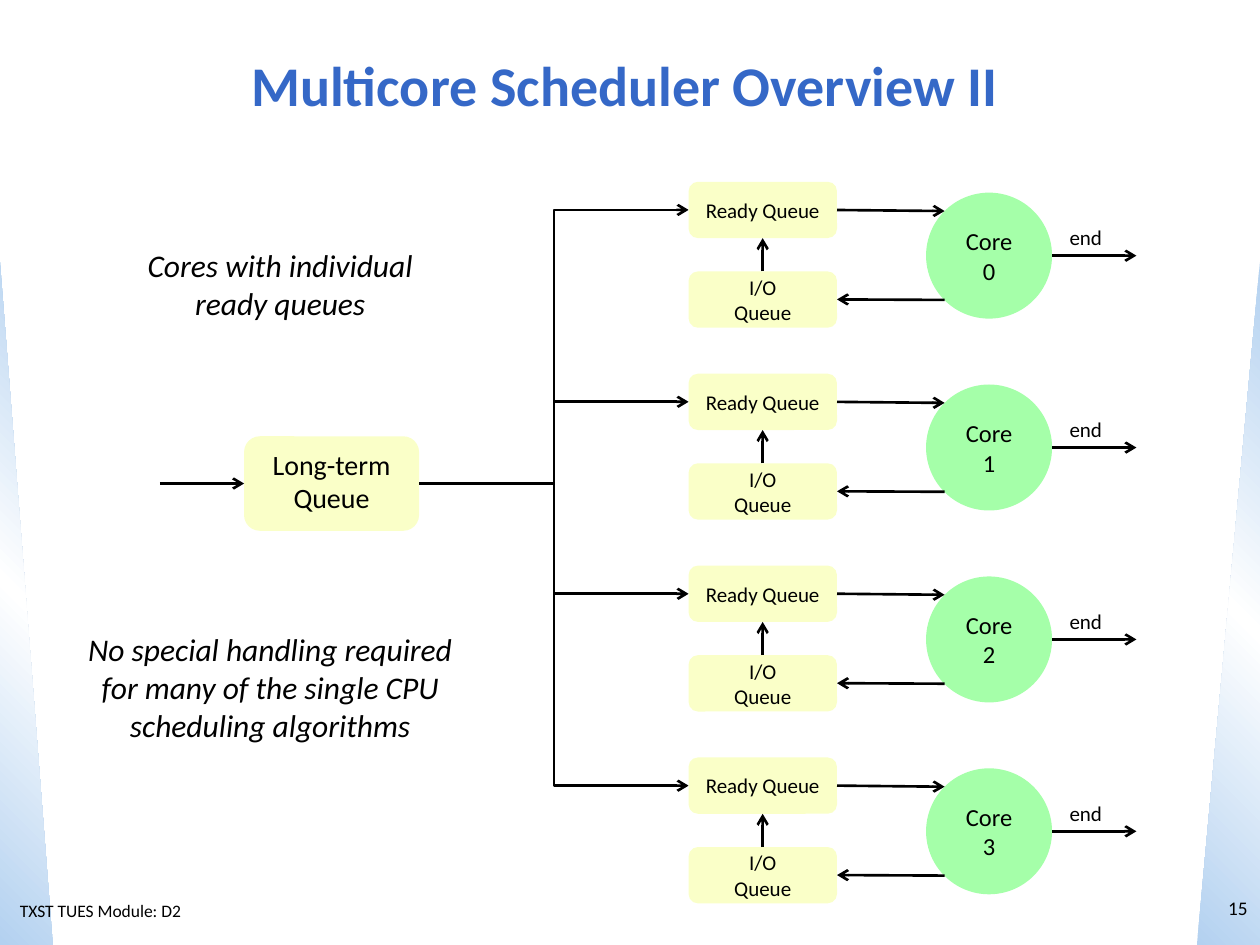
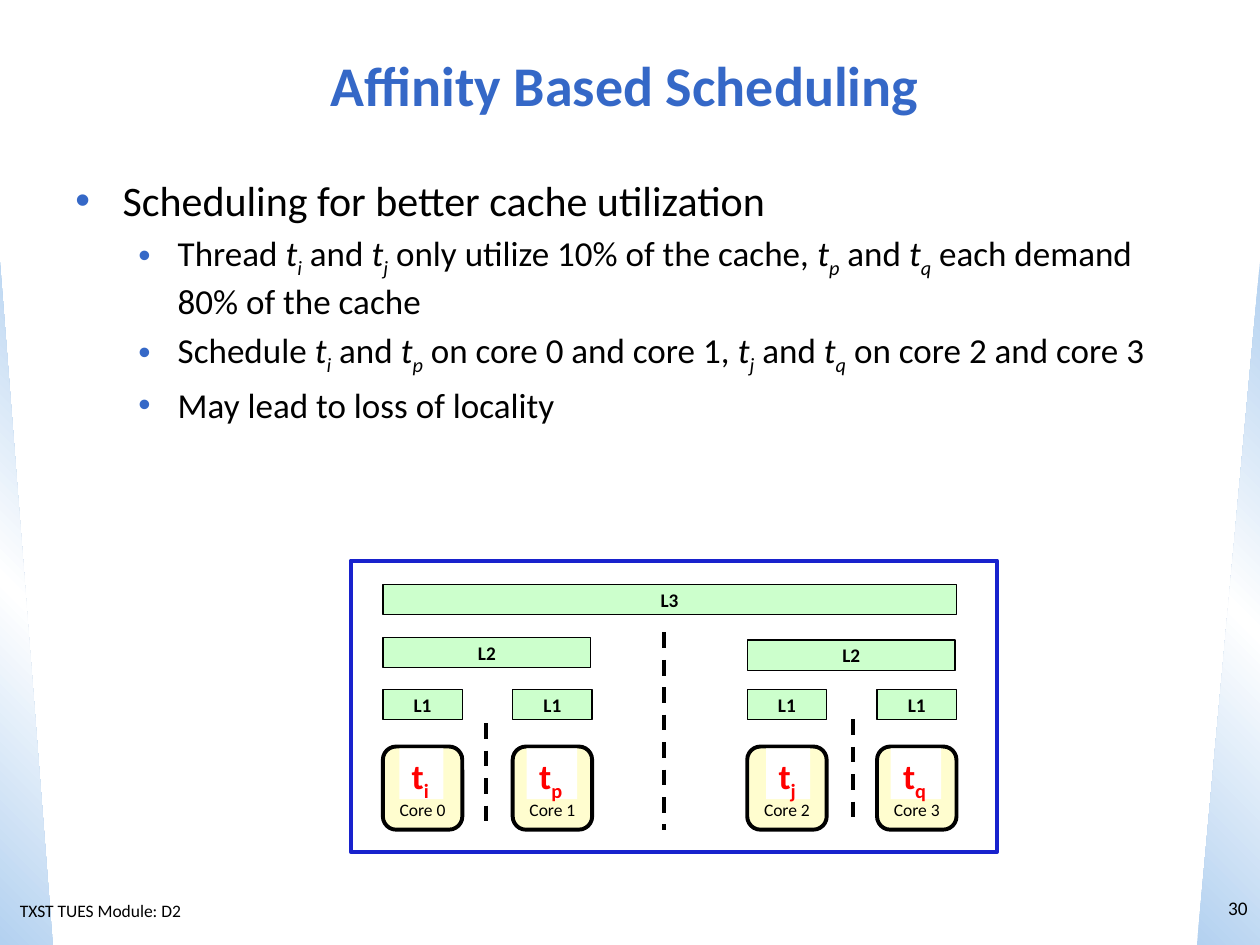
from copy import deepcopy

from pptx import Presentation
from pptx.dml.color import RGBColor
from pptx.enum.dml import MSO_LINE
from pptx.enum.shapes import MSO_CONNECTOR, MSO_SHAPE
from pptx.enum.text import MSO_ANCHOR, PP_ALIGN
from pptx.oxml.ns import qn
from pptx.util import Pt
from lxml import etree

RECT, ROUND, OVAL = MSO_SHAPE.RECTANGLE, MSO_SHAPE.ROUNDED_RECTANGLE, MSO_SHAPE.OVAL
WEDGE = MSO_SHAPE.RIGHT_TRIANGLE
STRAIGHT, ELBOW = MSO_CONNECTOR.STRAIGHT, MSO_CONNECTOR.ELBOW
DASH = MSO_LINE.DASH
LEFT, MID, RIGHT = PP_ALIGN.LEFT, PP_ALIGN.CENTER, PP_ALIGN.RIGHT
TOP, CENTRE, BASE = MSO_ANCHOR.TOP, MSO_ANCHOR.MIDDLE, MSO_ANCHOR.BOTTOM

FONT = "Calibri"
BLACK, WHITE, RED = "000000", "FFFFFF", "FF0000"
BLUE, SKY, FRAME = "3568C7", "B3D1F0", "1822CD"
YELLOW, GREEN, CREAM, MINT = "FAFFC8", "A5FFA9", "FFFDCF", "CCFFCC"
rgb = RGBColor.from_string


def box(slide, kind, x, y, w, h, text="", size=12, fill=None, edge=None, width=1.5,
        align=MID, anchor=CENTRE, color=BLACK, bold=False, ital=False, wrap=True):
    """Draw a shape, or a text box if kind is None; |t_i| marks t with subscript i."""
    area = Pt(x), Pt(y), Pt(w), Pt(h)
    if kind is None:
        shape = slide.shapes.add_textbox(*area)
    else:
        shape = slide.shapes.add_shape(kind, *area)
        shape.shadow.inherit = False
        if fill:
            shape.fill.solid()
            shape.fill.fore_color.rgb = rgb(fill)
        else:
            shape.fill.background()
        if edge:
            shape.line.color.rgb = rgb(edge)
            shape.line.width = Pt(width)
        else:
            shape.line.fill.background()
    frame = shape.text_frame
    frame.word_wrap, frame.vertical_anchor = wrap, anchor
    frame.text = text
    for para in frame.paragraphs:
        para.alignment = align
        parts = para.text.split("|")
        para.clear()
        for n, part in enumerate(parts):
            name = n % 2 == 1
            for k, piece in enumerate(part.split("_") if name else [part]):
                if not piece:
                    continue
                run = para.add_run()
                run.text = piece
                font = run.font
                font.name, font.size, font.bold = FONT, Pt(size), bold
                font.italic = ital or (name and not bold)
                font.color.rgb = rgb(color)
                if k:
                    run._r.get_or_add_rPr().set("baseline", "-25000")
    return shape


def line(slide, x1, y1, x2, y2, kind=STRAIGHT, width=1.5, dash=None):
    """Draw an arrow, or a plain dashed line if dash is given."""
    link = slide.shapes.add_connector(kind, Pt(x1), Pt(y1), Pt(x2), Pt(y2))
    link.line.color.rgb = rgb(BLACK)
    link.line.width = Pt(width)
    props = link._element.spPr
    if dash:
        link.line.dash_style = dash
    else:
        etree.SubElement(props.find(qn("a:ln")), qn("a:tailEnd"), type="arrow")
    etree.SubElement(props, qn("a:effectLst"))


deck = Presentation()
deck.slide_width, deck.slide_height = Pt(720), Pt(540)

# Shared parts: side wedges, footer, title, page number
slides = []
for title, page in [("Multicore Scheduler Overview II", "15"),
                    ("Affinity Based Scheduling", "30")]:
    slide = deck.slides.add_slide(deck.slide_layouts[6])
    slides.append(slide)
    for x, w, angle in [(0, 30.2, 45), (684, 36, 315)]:
        wedge = box(slide, WEDGE, x, 150, w, 390)
        wedge.fill.gradient()
        wedge.fill.gradient_angle = angle
        for stop in wedge.fill.gradient_stops:
            stop.color.rgb = rgb(SKY)
        stops = wedge._element.spPr.find(qn("a:gradFill")).find(qn("a:gsLst"))
        stops.insert(1, deepcopy(stops[0]))
        for stop, place in zip(wedge.fill.gradient_stops, (0, 0.5, 1)):
            stop.position = place
        wedge.fill.gradient_stops[1].color.rgb = rgb(WHITE)
        if x:
            wedge._element.spPr.find(qn("a:xfrm")).set("flipH", "1")
    box(slide, None, 4.3, 510.9, 126, 19.4, "TXST TUES Module: D2", 10,
        align=LEFT, anchor=TOP)
    box(slide, None, 18, 18, 678.2, 59.8, title, 32, color=BLUE, bold=True)
    box(slide, None, 684, 498, 36, 41.8, page, 11, align=RIGHT)

# Slide 1: long-term queue feeding four cores
slide = slides[0]
box(slide, ROUND, 139.5, 249.3, 100, 54, "Long-term Queue", 16, YELLOW, anchor=TOP)
line(slide, 91.4, 276.3, 139.5, 276.3)
box(slide, None, 66.2, 137.2, 187.9, 51.1, "Cores with individual ready queues", 18,
    anchor=TOP, ital=True)
box(slide, None, 42.5, 356.4, 223.9, 72.7,
    "No special handling required for many of the single CPU scheduling algorithms",
    18, anchor=TOP, ital=True)
for n in range(4):
    y = 103.9 + 109.65 * n
    line(slide, 239.5, 276.3, 393.5, y + 16.1, ELBOW)
    box(slide, OVAL, 529.2, y + 6.2, 72, 72, f"Core {n}", 14, GREEN)
    box(slide, ROUND, 393.5, y, 84.8, 32.2, "Ready Queue", 12, YELLOW)
    box(slide, ROUND, 393.5, y + 51.2, 84.8, 32.2, "I/O\nQueue", 12, YELLOW)
    line(slide, 435.8, y + 51.2, 435.8, y + 32.2)
    line(slide, 478.3, y + 16.1, 539.8, y + 16.7)
    line(slide, 539.8, y + 67.5, 478.3, y + 67.2)
    line(slide, 601.2, y + 42.2, 649.4, y + 42.2)
    box(slide, None, 604.1, y + 20.8, 33.1, 21.6, "end", 12,
        align=LEFT, anchor=TOP, wrap=False)

# Slide 2: bullets
slide = slides[1]
body = box(slide, None, 36, 96.2, 648, 194.4, "\n".join([
    "Scheduling for better cache utilization",
    "Thread |t_i| and |t_j| only utilize 10% of the cache, |t_p| and |t_q| each demand "
    "80% of the cache",
    "Schedule |t_i| and |t_p| on core 0 and core 1, |t_j| and |t_q| on core 2 and core 3",
    "May lead to loss of locality"]), 20, align=LEFT, anchor=TOP)
for n, para in enumerate(body.text_frame.paragraphs):
    left, hang = (58.5, 22.5) if n else (27, 27)
    if n:
        para.space_before = Pt(4)
    else:
        para.runs[0].font.size = Pt(24)
    props = para._p.get_or_add_pPr()
    props.set("marL", str(Pt(left)))
    props.set("indent", str(-Pt(hang)))
    props.set("lvl", str(min(n, 1)))
    tint = etree.SubElement(props, qn("a:buClr"))
    etree.SubElement(tint, qn("a:srgbClr"), val=BLUE)
    etree.SubElement(props, qn("a:buFont"), typeface="Arial")
    etree.SubElement(props, qn("a:buChar"), char="•")

# Cores and caches
cols = [side + 74.2 * n for side in (218.8, 427) for n in range(2)]
caches = [("L1", x, 394, 45.4) for x in cols]
caches += [("L2", cols[0], 364.3, 118.8), ("L2", cols[2], 365.8, 118.8),
           ("L3", cols[0], 334.1, 327.6)]
for n, x in enumerate(cols):
    box(slide, ROUND, x, 426.6, 45.4, 47.5, f"Core {n}", 10, CREAM, BLACK, 2.25,
        anchor=BASE)
for name, x, y, w in caches:
    box(slide, RECT, x, y, w, 17.3, name, 11, MINT, BLACK, 0.75, bold=True)
for x, y, end in [(379.4, 361.4, 474.5), (487.4, 411.1, 469.4), (277.9, 413.3, 470.9)]:
    line(slide, x, y, x, end, width=2.25, dash=DASH)
frame = box(slide, ROUND, 200.4, 320.4, 369.4, 166.3, edge=FRAME, width=2.25)
frame.adjustments[0] = 0

# Threads on the cores, ending above the core names
for name, x, w in [("i", 228.2, 25.2), ("p", 301, 28.8),
                   ("j", 437.8, 25.2), ("q", 509, 28.8)]:
    box(slide, RECT, x, 427.7, w, 29, f"|t_{name}|", 20, WHITE, align=LEFT, anchor=TOP,
        color=RED, bold=True, wrap=False)

deck.save("out.pptx")
